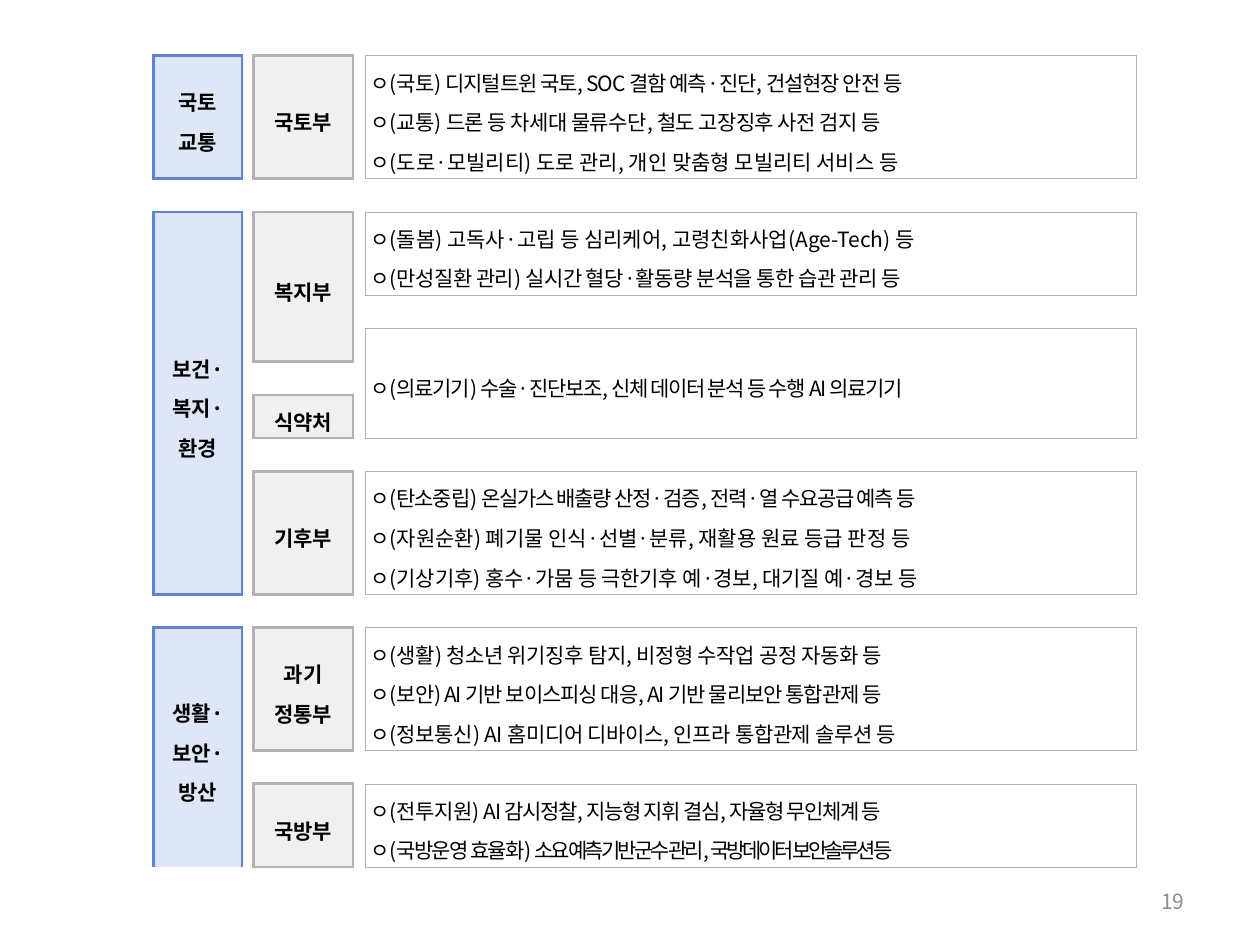
from lxml import etree
from pptx import Presentation
from pptx.dml.color import RGBColor
from pptx.enum.text import MSO_ANCHOR, PP_ALIGN
from pptx.oxml.ns import qn
from pptx.util import Cm, Pt

MIDDLE = MSO_ANCHOR.MIDDLE
LEFT, CENTER, RIGHT = PP_ALIGN.LEFT, PP_ALIGN.CENTER, PP_ALIGN.RIGHT

BLACK = RGBColor(0x00, 0x00, 0x00)
BLUE = RGBColor(0x61, 0x82, 0xD6)
PALE_BLUE = RGBColor(0xDF, 0xE6, 0xF7)
GRAY = RGBColor(0xB2, 0xB2, 0xB2)
PALE_GRAY = RGBColor(0xF0, 0xF0, 0xF0)
NUMBER_GRAY = RGBColor(0x8C, 0x8C, 0x8C)

FONT = "Noto Sans CJK KR"
NO_STYLE = "{2D5ABB26-0587-4C30-8999-92F81FD0307C}"
THICK, THIN = 1.7, 0.28
BULLET = "ㅇ"

GAP, ONE_LINE, TWO_LINES, THREE_LINES = 0.67, 0.87, 1.68, 2.48
COLUMNS = [1.78, 0.23, 2.01, 0.25, 15.54]
ROWS = [THREE_LINES, GAP, TWO_LINES, GAP, GAP, GAP, ONE_LINE, GAP,
        THREE_LINES, GAP, THREE_LINES, GAP, TWO_LINES]
FIELD_COLUMN, SPACER_COLUMN, MINISTRY_COLUMN, TASK_COLUMN = 0, 1, 2, 4

# First row, number of rows, lines
FIELDS = [
    (0, 1, ["국토", "교통"]),
    (2, 7, ["보건·", "복지·", "환경"]),
    (10, 3, ["생활·", "보안·", "방산"]),
]
MINISTRIES = [
    (0, 1, ["국토부"]),
    (2, 3, ["복지부"]),
    (6, 1, ["식약처"]),
    (8, 1, ["기후부"]),
    (10, 1, ["과기", "정통부"]),
    (12, 1, ["국방부"]),
]
# Each line is a list of (text, letter spacing in points)
TASKS = [
    (0, 1, [
        [("(국토) 디지털트윈 국토, SOC 결함 예측·진단, 건설현장 안전 등", -0.6)],
        [("(교통) 드론 등 차세대 물류수단, 철도 고장징후 사전 검지 등", -0.3)],
        [("(도로·모빌리티) 도로 관리, 개인 맞춤형 모빌리티 서비스 등", 0)],
    ]),
    (2, 1, [
        [("(돌봄) 고독사·고립 등 심리케어, 고령친화사업(Age-Tech) 등", 0)],
        [("(만성질환 관리) 실시간 혈당·활동량 분석을 통한 습관 관리 등", -0.3)],
    ]),
    (4, 3, [
        [("(의료기기) 수술·진단보조, 신체 데이터 분석 등 수행 AI 의료기기", -0.8)],
    ]),
    (8, 1, [
        [("(탄소중립) 온실가스 배출량 산정·검증, 전력·열 수요공급 예측 등", -0.7)],
        [("(자원순환) 폐기물 인식·선별·분류, 재활용 원료 등급 판정 등", 0)],
        [("(기상기후) 홍수·가뭄 등 극한기후 예·경보, 대기질 예·경보 등", -0.1)],
    ]),
    (10, 1, [
        [("(생활) 청소년 위기징후 탐지, 비정형 수작업 공정 자동화 등", -0.2)],
        [("(보안) AI 기반 보이스피싱 대응, AI 기반 물리보안 통합관제 등", -0.6)],
        [("(정보통신) AI 홈미디어 디바이스, 인프라 통합관제 솔루션 등", -0.2)],
    ]),
    (12, 1, [
        [("(전투지원) ", -0.3), ("AI 감시정찰, 지능형 지휘 결심, 자율형 무인체계 등", -0.8)],
        [("(국방운영 효율화) ", -1),
         ("소요 예측 기반 군수 관리, 국방데이터 보안솔루션 등", -1.9)],
    ]),
]


def add_span(para, text, color=BLACK, bold=False, spacing=0):
    span = para.add_run()
    span.text = text
    span.font.size = Pt(12)
    span.font.name = FONT
    span.font.bold = bold
    span.font.color.rgb = color
    properties = span._r.get_or_add_rPr()
    etree.SubElement(properties, qn("a:ea")).set("typeface", FONT)
    if spacing:
        properties.set("spc", str(round(spacing * 100)))


def clear_cell(cell):
    """Remove margins and shrink the empty line so that narrow rows keep their height."""
    cell.margin_left = cell.margin_right = cell.margin_top = cell.margin_bottom = 0
    para = cell.text_frame.paragraphs[0]
    etree.SubElement(para._p, qn("a:endParaRPr")).set("sz", "400")


def fill_cell(cell, lines, align, bold, side_margin):
    cell.vertical_anchor = MIDDLE
    cell.margin_left = cell.margin_right = Cm(side_margin)
    cell.margin_top = cell.margin_bottom = Cm(0.03)
    frame = cell.text_frame
    frame.clear()
    for end in frame.paragraphs[0]._p.findall(qn("a:endParaRPr")):
        frame.paragraphs[0]._p.remove(end)
    for index, spans in enumerate(lines):
        para = frame.paragraphs[0] if index == 0 else frame.add_paragraph()
        para.alignment = align
        para.line_spacing = 1.3
        for text, spacing in spans:
            add_span(para, text, bold=bold, spacing=spacing)


def outline(edges, first, count, column, line):
    """Record the outer edges of a block, and the same edges of its neighbours."""
    last = first + count - 1
    for row in range(first, last + 1):
        edges[row, column, "L"] = edges[row, column - 1, "R"] = line
        edges[row, column, "R"] = edges[row, column + 1, "L"] = line
    edges[first, column, "T"] = edges[first - 1, column, "B"] = line
    edges[last, column, "B"] = edges[last + 1, column, "T"] = line


def draw_edges(cell, row, column, edges):
    properties = cell._tc.get_or_add_tcPr()
    for index, side in enumerate("LRTB"):
        edge = etree.Element(qn(f"a:ln{side}"))
        color, width = edges.get((row, column, side), (None, 0))
        if color is None:
            etree.SubElement(edge, qn("a:noFill"))
        else:
            edge.set("w", str(Pt(width)))
            solid = etree.SubElement(edge, qn("a:solidFill"))
            etree.SubElement(solid, qn("a:srgbClr")).set("val", str(color))
        properties.insert(index, edge)


def add_ministry_table(page, left, top):
    shape = page.shapes.add_table(len(ROWS), len(COLUMNS), Cm(left), Cm(top),
                                  Cm(sum(COLUMNS)), Cm(sum(ROWS)))
    table = shape.table
    table.first_row = table.horz_banding = False
    table._tbl.tblPr.find(qn("a:tableStyleId")).text = NO_STYLE
    for column, width in zip(table.columns, COLUMNS):
        column.width = Cm(width)
    for row, height in zip(table.rows, ROWS):
        row.height = Cm(height)
    for cell in table.iter_cells():
        clear_cell(cell)
        cell.fill.background()

    edges = {}

    def add_block(column, first, count, lines, line, fill=None,
                  align=CENTER, bold=True, side_margin=0.03):
        cell = table.cell(first, column)
        if count > 1:
            cell.merge(table.cell(first + count - 1, column))
        fill_cell(cell, lines, align, bold, side_margin)
        if fill is not None:
            cell.fill.solid()
            cell.fill.fore_color.rgb = fill
        outline(edges, first, count, column, line)

    for column, blocks, line, fill in (
            (MINISTRY_COLUMN, MINISTRIES, (GRAY, THICK), PALE_GRAY),
            (FIELD_COLUMN, FIELDS, (BLUE, THICK), PALE_BLUE)):
        for first, count, labels in blocks:
            add_block(column, first, count, [[(label, 0)] for label in labels], line, fill)
    for first, count, tasks in TASKS:
        lines = [[(BULLET, 0), *spans] for spans in tasks]
        add_block(TASK_COLUMN, first, count, lines, (GRAY, THIN),
                  align=LEFT, bold=False, side_margin=0.1)
    table.cell(2, SPACER_COLUMN).merge(table.cell(4, SPACER_COLUMN))

    for row in range(len(ROWS)):
        for column in range(len(COLUMNS)):
            draw_edges(table.cell(row, column), row, column, edges)


def add_page_number(page, left, top, width, height):
    box = page.shapes.add_textbox(Cm(left), Cm(top), Cm(width), Cm(height))
    frame = box.text_frame
    frame.word_wrap = True
    frame.vertical_anchor = MIDDLE
    para = frame.paragraphs[0]
    para.alignment = RIGHT
    add_span(para, "19", color=NUMBER_GRAY)


def main():
    deck = Presentation()
    deck.slide_width, deck.slide_height = Cm(25.4), Cm(19.05)
    page = deck.slides.add_slide(deck.slide_layouts[6])
    add_ministry_table(page, 3.1, 1.12)
    add_page_number(page, 18.21, 17.65, 5.92, 1.02)
    deck.save("out.pptx")


if __name__ == "__main__":
    main()
